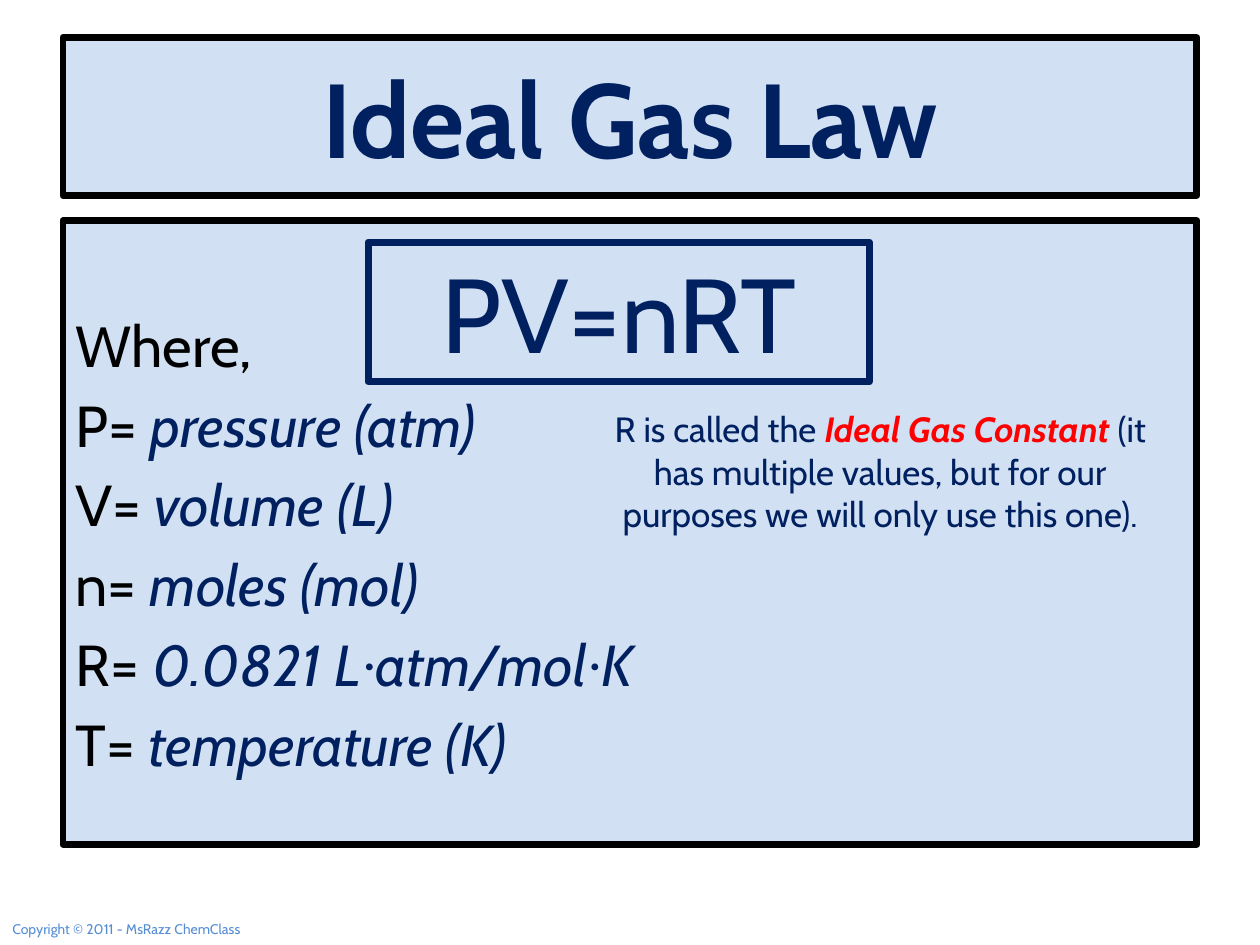
from dataclasses import dataclass

from lxml import etree
from pptx import Presentation
from pptx.dml.color import RGBColor
from pptx.enum import shapes, text
from pptx.oxml.ns import qn
from pptx.util import Cm, Pt


@dataclass(frozen=True)
class Theme:
    font: str = "Cabin"
    symbol_font: str = "Times New Roman"
    navy: str = "002060"
    black: str = "000000"
    red: str = "FF0000"
    panel: str = "C6D9F1"
    credit: str = "558ED5"
    display_size: int = 60
    body_size: int = 33
    note_size: int = 20
    credit_size: int = 8
    line_width: int = 4
    panel_opacity: int = 80


THEME = Theme()

VARIABLES = [
    ("P= ", "pressure (atm)"),
    ("V= ", "volume (L)"),
    ("n= ", "moles (mol)"),
    ("R= ", "0.0821 L·atm/mol·K"),
    ("T= ", "temperature (K)"),
]


def place(shape, left, top, width, height):
    """Position a shape, with lengths in centimetres."""
    shape.left, shape.top = Cm(left), Cm(top)
    shape.width, shape.height = Cm(width), Cm(height)


def add_run(paragraph, words, size, color, bold=False, italic=False, font=THEME.font):
    run = paragraph.add_run()
    run.text = words
    run.font.name = font
    run.font.size = Pt(size)
    run.font.bold = bold
    run.font.italic = italic
    run.font.color.rgb = RGBColor.from_string(color)


def add_value(paragraph, value):
    """Add an italic value whose multiplication dots use the symbol font."""
    for index, part in enumerate(value.split("·")):
        if index:
            add_run(paragraph, "·", THEME.body_size, THEME.navy, italic=True,
                    font=THEME.symbol_font)
        add_run(paragraph, part, THEME.body_size, THEME.navy, italic=True)


def set_outline(shape, color):
    shape.line.color.rgb = RGBColor.from_string(color)
    shape.line.width = Pt(THEME.line_width)


def style_panel(shape):
    """Give a placeholder the translucent fill and black outline."""
    shape.fill.solid()
    shape.fill.fore_color.rgb = RGBColor.from_string(THEME.panel)
    color = shape.fill._xPr.find(qn("a:solidFill"))[0]
    etree.SubElement(color, qn("a:alpha"), val=str(THEME.panel_opacity * 1000))
    set_outline(shape, THEME.black)
    shape.text_frame.auto_size = text.MSO_AUTO_SIZE.NONE


def remove_bullet(paragraph):
    properties = paragraph._p.get_or_add_pPr()
    properties.set("marL", "0")
    properties.set("indent", "0")
    etree.SubElement(properties, qn("a:buNone"))


def fill_title(shape):
    place(shape, 1.27, 0.76, 22.86, 3.18)
    style_panel(shape)
    shape.text_frame.vertical_anchor = text.MSO_ANCHOR.MIDDLE
    paragraph = shape.text_frame.paragraphs[0]
    paragraph.alignment = text.PP_ALIGN.CENTER
    add_run(paragraph, "Ideal Gas Law", THEME.display_size, THEME.navy, bold=True)


def fill_definitions(shape):
    place(shape, 1.27, 4.45, 22.86, 12.57)
    style_panel(shape)
    frame = shape.text_frame
    frame.margin_top = Cm(1.79)
    first = frame.paragraphs[0]
    first.space_before = Pt(0)
    remove_bullet(first)
    add_run(first, "Where,", THEME.body_size, THEME.black)
    for symbol, value in VARIABLES:
        paragraph = frame.add_paragraph()
        paragraph.space_before = Pt(6)
        remove_bullet(paragraph)
        add_run(paragraph, symbol, THEME.body_size, THEME.black)
        add_value(paragraph, value)


def add_formula(slide):
    shape = slide.shapes.add_shape(
        shapes.MSO_SHAPE.RECTANGLE, Cm(7.42), Cm(4.88), Cm(10.11), Cm(2.82))
    shape.shadow.inherit = False
    shape.fill.background()
    set_outline(shape, THEME.navy)
    shape.text_frame.vertical_anchor = text.MSO_ANCHOR.TOP
    paragraph = shape.text_frame.paragraphs[0]
    paragraph.alignment = text.PP_ALIGN.CENTER
    add_run(paragraph, "PV=nRT", THEME.display_size, THEME.navy)


def add_text(slide, box, alignment):
    """Add a wrapping text box and return its paragraph."""
    shape = slide.shapes.add_textbox(*map(Cm, box))
    shape.text_frame.word_wrap = True
    paragraph = shape.text_frame.paragraphs[0]
    paragraph.alignment = alignment
    return paragraph


def add_constant_note(slide):
    paragraph = add_text(slide, (11.71, 8.1, 12.07, 2.82), text.PP_ALIGN.CENTER)
    add_run(paragraph, "R is called the ", THEME.note_size, THEME.navy)
    add_run(paragraph, "Ideal Gas Constant ", THEME.note_size, THEME.red,
            bold=True, italic=True)
    add_run(paragraph,
            "(it has multiple values, but for our purposes we will only use this one).",
            THEME.note_size, THEME.navy)


def add_copyright(slide):
    paragraph = add_text(slide, (0, 18.44, 6.02, 0.61), text.PP_ALIGN.LEFT)
    add_run(paragraph, "Copyright © 2011 - MsRazz ChemClass",
            THEME.credit_size, THEME.credit)


def main():
    presentation = Presentation()
    presentation.slide_width, presentation.slide_height = Cm(25.4), Cm(19.05)
    slide = presentation.slides.add_slide(presentation.slide_layouts[1])
    fill_title(slide.shapes.title)
    fill_definitions(slide.placeholders[1])
    add_formula(slide)
    add_constant_note(slide)
    add_copyright(slide)
    presentation.save("out.pptx")


if __name__ == "__main__":
    main()
